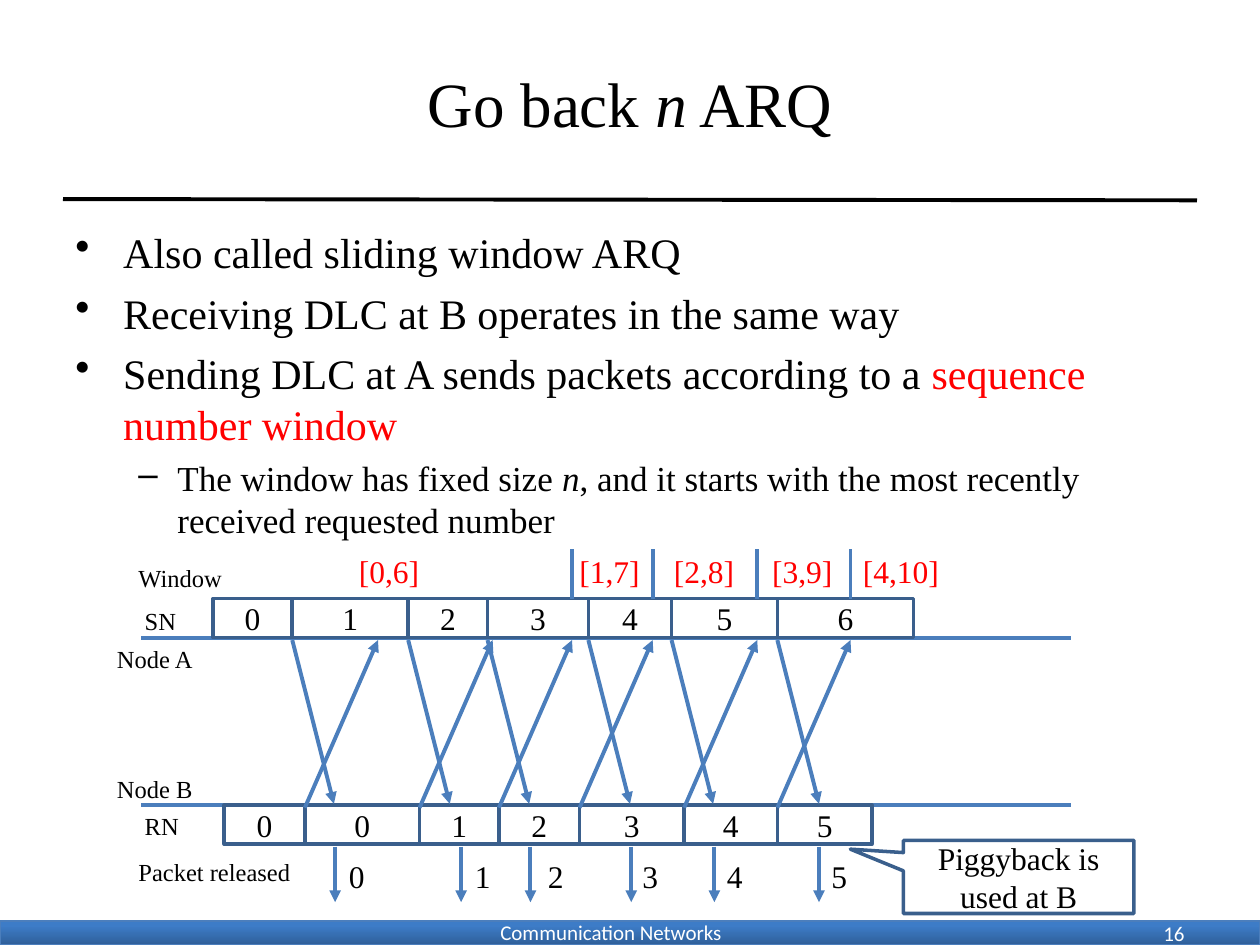
"""Build the "Go back n ARQ" slide with its sliding window timing diagram."""
from lxml.etree import SubElement
from pptx import Presentation
from pptx.dml.color import RGBColor
from pptx.enum.shapes import MSO_CONNECTOR, MSO_SHAPE
from pptx.enum.text import MSO_ANCHOR, MSO_AUTO_SIZE, PP_ALIGN
from pptx.oxml.ns import qn
from pptx.util import Inches, Pt

BLACK, WHITE, RED = "000000", "FFFFFF", "FF0000"
BLUE, DARK_BLUE = "4B7EBC", "3A5F8C"
SERIF, SANS = "Times New Roman", "Calibri"

TITLE = [("Go back ", {}), ("n", {"italic": True}), (" ARQ", {})]
BULLETS = [
    (0, [("Also called sliding window ARQ", {})]),
    (0, [("Receiving DLC at B operates in the same way", {})]),
    (0, [("Sending DLC at A sends packets according to a ", {}),
         ("sequence number window", {"color": RED})]),
    (1, [("The window has fixed size ", {}), ("n", {"italic": True}),
         (", and it starts with the most recently received requested number", {})]),
]
LEVELS = [("•", 24, 0.38, -0.38), ("–", 20, 0.81, -0.31)]

SN = ["0", "1", "2", "3", "4", "5", "6"]
SN_EDGES = [1.69, 2.32, 3.24, 3.87, 4.67, 5.33, 6.17, 7.25]
RN = ["0", "0", "1", "2", "3", "4", "5"]
RN_EDGES = [1.78, 2.42, 3.33, 3.96, 4.6, 5.43, 6.17, 6.92]
SN_TOP, NODE_A, NODE_B, CELL_H = 4.75, 5.06, 6.39, 0.31
SEND_DX, REPLY_DX = 0.33, 0.58

ROW_LABELS = [("Window", 1, 4.42, 0.87), ("SN", 1.05, 4.76, 0.45),
              ("Node A", 0.83, 5.06, 0.81), ("Node B", 0.83, 6.09, 0.81),
              ("RN", 1.05, 6.39, 0.48), ("Packet released", 1, 6.75, 1.45)]
WINDOWS = [("[0,6]", 2.75, 0.69), ("[1,7]", 4.5, 0.69), ("[2,8]", 5.25, 0.69),
           ("[3,9]", 6.03, 0.69), ("[4,10]", 6.75, 0.81)]
RELEASED = [("0", 2.66, 2.67), ("1", 3.66, 3.67), ("2", 4.21, 4.25),
            ("3", 5.01, 5), ("4", 5.67, 5.67), ("5", 6.5, 6.5)]


def rgb(color):
    return RGBColor.from_string(color)


def add_runs(p, runs, size, color=BLACK, font=SERIF):
    for text, style in runs:
        r = p.add_run()
        r.text = text
        r.font.size = Pt(size)
        r.font.name = font
        r.font.italic = style.get("italic", False)
        r.font.color.rgb = rgb(style.get("color", color))


def add_text(slide, box, runs, size, color=BLACK, font=SERIF,
             align=PP_ALIGN.LEFT, anchor=MSO_ANCHOR.TOP, wrap=True):
    tf = slide.shapes.add_textbox(*map(Inches, box)).text_frame
    tf.word_wrap = wrap
    tf.vertical_anchor = anchor
    tf.auto_size = MSO_AUTO_SIZE.NONE if wrap else MSO_AUTO_SIZE.SHAPE_TO_FIT_TEXT
    p = tf.paragraphs[0]
    p.alignment = align
    add_runs(p, runs, size, color, font)


def add_label(slide, text, x, y, w, h, size, color=BLACK):
    add_text(slide, (x, y, w, h), [(text, {})], size, color, wrap=False)


def add_line(slide, x1, y1, x2, y2, color=BLUE, arrow=False):
    s = slide.shapes.add_connector(MSO_CONNECTOR.STRAIGHT,
                                   *map(Inches, (x1, y1, x2, y2)))
    s.line.color.rgb = rgb(color)
    s.line.width = Pt(2.25)
    if arrow:
        SubElement(s.line._get_or_add_ln(), qn("a:tailEnd"), type="triangle")
    SubElement(s._element.spPr, qn("a:effectLst"))


def add_box(slide, kind, box, text):
    sp = slide.shapes.add_shape(kind, *map(Inches, box))
    sp.shadow.inherit = False
    sp.fill.solid()
    sp.fill.fore_color.rgb = rgb(WHITE)
    sp.line.color.rgb = rgb(DARK_BLUE)
    sp.line.width = Pt(2)
    tf = sp.text_frame
    tf.word_wrap = True
    tf.vertical_anchor = MSO_ANCHOR.MIDDLE
    p = tf.paragraphs[0]
    p.alignment = PP_ALIGN.CENTER
    add_runs(p, [(text, {})], 18)
    return sp


def add_packets(slide, numbers, edges, top):
    for text, left, right in zip(numbers, edges, edges[1:]):
        add_box(slide, MSO_SHAPE.RECTANGLE, (left, top, right - left, CELL_H), text)


def add_frame(slide):
    sp = slide.shapes.add_shape(MSO_SHAPE.RECTANGLE,
                                *map(Inches, (0, 7.31, 10, 0.19)))
    sp.shadow.inherit = False
    sp.fill.gradient()
    sp.fill.gradient_angle = 90
    for stop, (position, color) in zip(sp.fill.gradient_stops,
                                       [(0, "2F5F99"), (0.8, "3D7CC7")]):
        stop.position = position
        stop.color.rgb = rgb(color)
    sp.line.color.rgb = rgb(BLUE)
    sp.line.width = Pt(0.75)
    add_line(slide, 0.5, 1.58, 9.5, 1.59, BLACK)
    add_text(slide, (3.7, 7.25, 2.3, 0.3), [("Communication Networks", {})],
             12, WHITE, SANS, PP_ALIGN.CENTER)
    add_text(slide, (7.17, 7.26, 2.33, 0.2), [("16", {})],
             12, WHITE, SANS, PP_ALIGN.RIGHT)


def add_bullets(slide):
    tf = slide.shapes.add_textbox(*map(Inches, (0.5, 1.75, 9, 2.5))).text_frame
    tf.word_wrap = True
    for i, (level, runs) in enumerate(BULLETS):
        char, size, margin, indent = LEVELS[level]
        p = tf.add_paragraph() if i else tf.paragraphs[0]
        p.level = level
        p.space_before = Pt(0.24 * size)
        pPr = p._p.get_or_add_pPr()
        pPr.set("marL", str(Inches(margin)))
        pPr.set("indent", str(Inches(indent)))
        SubElement(pPr, qn("a:buChar"), char=char)
        add_runs(p, runs, size)


def add_diagram(slide):
    for y in (NODE_A, NODE_B):
        add_line(slide, 1.12, y, 8.5, y)
    add_packets(slide, SN, SN_EDGES, SN_TOP)
    add_packets(slide, RN, RN_EDGES, NODE_B)
    for sent, replied in zip(SN_EDGES[1:-1], RN_EDGES[1:-1]):
        add_line(slide, sent, 5.08, sent + SEND_DX, 6.38, arrow=True)
        add_line(slide, replied, 6.41, replied + REPLY_DX, 5.08, arrow=True)
    for replied in RN_EDGES[3:-1]:
        add_line(slide, replied + REPLY_DX, 4.36, replied + REPLY_DX, SN_TOP)
    for text, x, y, w in ROW_LABELS:
        add_label(slide, text, x, y, w, 0.34, 14)
    for text, x, w in WINDOWS:
        add_label(slide, text, x, 4.33, w, 0.4, 18, RED)
    for text, arrow_x, x in RELEASED:
        add_line(slide, arrow_x, 6.72, arrow_x, 7.16, arrow=True)
        add_label(slide, text, x, 6.75, 0.33, 0.4, 18)
    callout = add_box(slide, MSO_SHAPE.RECTANGULAR_CALLOUT,
                      (7.17, 6.67, 1.83, 0.58), "Piggyback is used at B")
    callout.adjustments[0] = -0.73
    callout.adjustments[1] = -0.38


def main():
    prs = Presentation()
    prs.slide_width, prs.slide_height = Inches(10), Inches(7.5)
    slide = prs.slides.add_slide(prs.slide_layouts[6])
    add_frame(slide)
    add_text(slide, (0.5, 0.3, 9, 1.03), TITLE, 36,
             align=PP_ALIGN.CENTER, anchor=MSO_ANCHOR.MIDDLE)
    add_bullets(slide)
    add_diagram(slide)
    prs.save("out.pptx")


if __name__ == "__main__":
    main()
